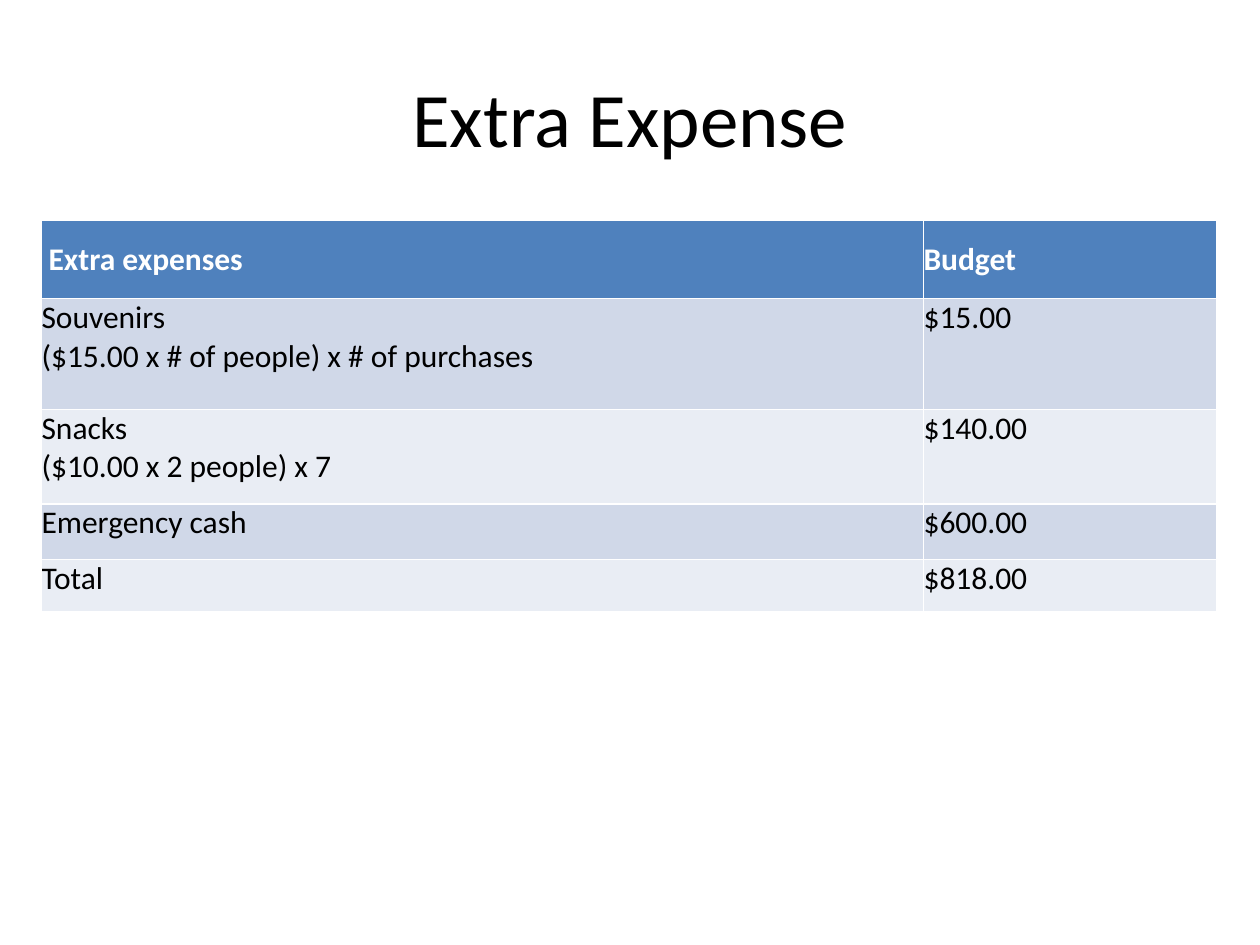
import pptx
import pptx.util
import pptx.dml.color
import pptx.enum.text

Inches = pptx.util.Inches
ANCHOR = pptx.enum.text.MSO_ANCHOR
ALIGN = pptx.enum.text.PP_ALIGN


class Deck:
    font = "Calibri"
    hues = {"ink": "000000", "head": "4F81BD", "pale": "FFFFFF",
            "odd": "D0D8E8", "even": "E9EDF4"}

    def __init__(self, wide, high):
        self.file = pptx.Presentation()
        self.file.slide_width = Inches(wide)
        self.file.slide_height = Inches(high)
        self.slide = self.file.slides.add_slide(self.file.slide_layouts[5])

    def hue(self, name):
        return pptx.dml.color.RGBColor.from_string(self.hues[name])

    def style(self, frame, size, hue, align, bold=False):
        for para in frame.paragraphs:
            para.alignment = align
            para.font.name = self.font
            para.font.size = pptx.util.Pt(size)
            para.font.bold = bold
            para.font.color.rgb = self.hue(hue)

    def title(self, text, left, top, wide, high):
        shape = self.slide.shapes.title
        shape.left, shape.top = Inches(left), Inches(top)
        shape.width, shape.height = Inches(wide), Inches(high)
        shape.text_frame.text = text
        shape.text_frame.vertical_anchor = ANCHOR.MIDDLE
        self.style(shape.text_frame, 44, "ink", ALIGN.CENTER)

    def table(self, rows, left, top, widths, heights):
        table = self.slide.shapes.add_table(
            len(rows), len(widths), Inches(left), Inches(top),
            Inches(sum(widths)), Inches(sum(heights))).table
        for col, wide in zip(table.columns, widths):
            col.width = Inches(wide)
        for i, (row, high) in enumerate(zip(rows, heights)):
            table.rows[i].height = Inches(high)
            for j, text in enumerate(row):
                self.cell(table.cell(i, j), text, i)

    def cell(self, cell, text, row):
        head = row == 0
        cell.text = text
        cell.margin_left = cell.margin_right = 0
        cell.margin_top = cell.margin_bottom = 0
        cell.vertical_anchor = ANCHOR.MIDDLE if head else ANCHOR.TOP
        cell.fill.solid()
        band = "odd" if row % 2 else "even"
        cell.fill.fore_color.rgb = self.hue("head" if head else band)
        self.style(cell.text_frame, 18, "pale" if head else "ink",
                   ALIGN.LEFT, head)

    def save(self):
        self.file.save("out.pptx")


def main():
    deck = Deck(10, 7.5)
    deck.title("Extra Expense", 0.5, 0.3, 9, 1.25)
    costs = [
        (" Extra expenses", "Budget"),
        ("Souvenirs\n($15.00 x # of people) x # of purchases", "$15.00"),
        ("Snacks\n($10.00 x 2 people) x 7", "$140.00"),
        ("Emergency cash", "$600.00"),
        ("Total", "$818.00"),
    ]
    deck.table(costs, 0.33, 1.75, [7, 2.33], [0.62, 0.88, 0.75, 0.44, 0.42])
    deck.save()


if __name__ == "__main__":
    main()
